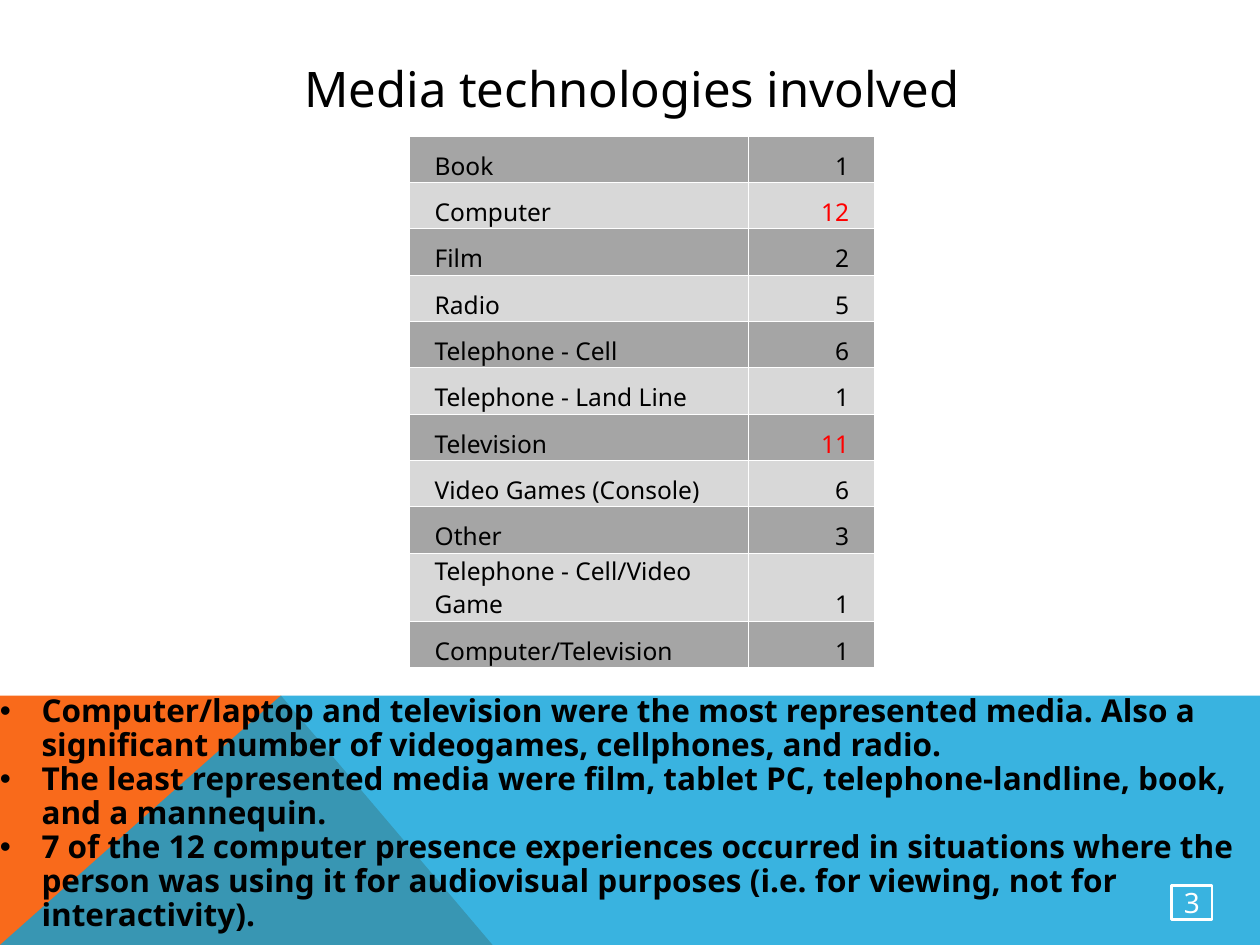
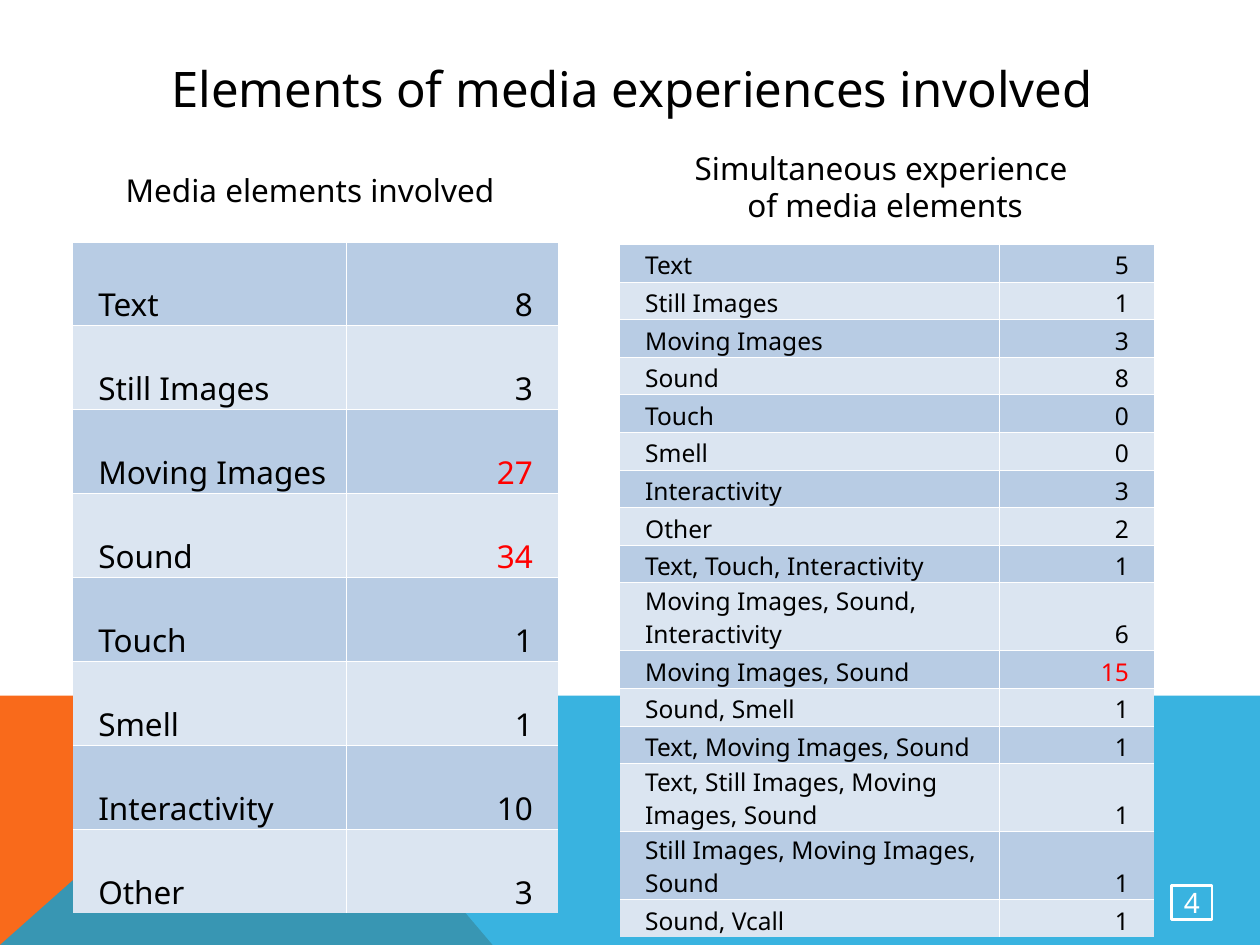
from lxml.etree import SubElement
from pptx import Presentation
from pptx.dml.color import RGBColor
from pptx.enum.shapes import MSO_SHAPE as SHAPE
from pptx.enum.text import MSO_ANCHOR as ANCHOR, PP_ALIGN as ALIGN
from pptx.oxml.ns import qn
from pptx.util import Inches, Pt

FONT = "Noto Sans"
BLACK, WHITE, RED = "000000", "FFFFFF", "FF0000"
ORANGE, BLUE = "F96A1B", "08A1D9"
GREYS = ("A5A5A5", "D8D8D8")
PALE_BLUES = ("B8CCE4", "DBE5F1")
WRAPPED_ROW = 0.54   # height of a row whose label takes two lines
LONGEST_LINE = 26    # characters that fit on one line of a label

TECHNOLOGIES = [
    ("Book", 1), ("Computer", 12), ("Film", 2), ("Radio", 5),
    ("Telephone - Cell", 6), ("Telephone - Land Line", 1),
    ("Television", 11), ("Video Games (Console)", 6), ("Other", 3),
    ("Telephone - Cell/Video Game", 1), ("Computer/Television", 1),
]
FINDINGS = [
    "Computer/laptop and television were the most represented media. "
    "Also a significant number of videogames, cellphones, and radio.",
    "The least represented media were film, tablet PC, "
    "telephone-landline, book, and a mannequin.",
    "7 of the 12 computer presence experiences occurred in situations "
    "where the person was using it for audiovisual purposes "
    "(i.e. for viewing, not for interactivity).",
]
ELEMENTS = [
    ("Text", 8), ("Still Images", 3), ("Moving Images", 27), ("Sound", 34),
    ("Touch", 1), ("Smell", 1), ("Interactivity", 10), ("Other", 3),
]
COMBINATIONS = [
    ("Text", 5), ("Still Images", 1), ("Moving Images", 3), ("Sound", 8),
    ("Touch", 0), ("Smell", 0), ("Interactivity", 3), ("Other", 2),
    ("Text, Touch, Interactivity", 1),
    ("Moving Images, Sound, Interactivity", 6),
    ("Moving Images, Sound", 15), ("Sound, Smell", 1),
    ("Text, Moving Images, Sound", 1),
    ("Text, Still Images, Moving Images, Sound", 1),
    ("Still Images, Moving Images, Sound", 1), ("Sound, Vcall", 1),
]


def rgb(code):
    return RGBColor.from_string(code)


def inches(*lengths):
    return [Inches(length) for length in lengths]


def set_margins(holder, left=0, top=0, right=0, bottom=0):
    margins = {"left": left, "top": top, "right": right, "bottom": bottom}
    for side, length in margins.items():
        setattr(holder, f"margin_{side}", Inches(length))


def write(paragraph, text, size, color=BLACK, align=ALIGN.LEFT, bold=False):
    paragraph.text = text
    paragraph.alignment = align
    for run in paragraph.runs:
        for name, value in {"name": FONT, "size": Pt(size), "bold": bold}.items():
            setattr(run.font, name, value)
        run.font.color.rgb = rgb(color)


def add_heading(slide, box, text, size, anchor=ANCHOR.TOP, margin=0):
    frame = slide.shapes.add_textbox(*inches(*box)).text_frame
    frame.word_wrap = True
    frame.vertical_anchor = anchor
    set_margins(frame, margin, margin, margin, margin)
    write(frame.paragraphs[0], text, size, align=ALIGN.CENTER)


# Band along the bottom

def add_outline(slide, points, color):
    start, *rest = [inches(*point) for point in points]
    builder = slide.shapes.build_freeform(*start)
    builder.add_line_segments(rest, close=True)
    outline = builder.convert_to_shape()
    outline.shadow.inherit = False
    outline.fill.solid()
    outline.fill.fore_color.rgb = rgb(color)
    outline.line.fill.background()
    return outline


def add_band(slide, left=0, top=5.52, width=10, height=1.98):
    right, bottom = left + width, top + height
    peak, foot = left + 2.23, left + 3.91
    add_outline(slide, [(left, bottom), (left, top), (peak, top),
                        (foot, bottom)], ORANGE)
    veil = add_outline(slide, [(left, bottom), (peak, top), (right, top),
                               (right, bottom)], BLUE)
    veil_color = veil.fill._xPr.find(qn("a:solidFill"))[0]
    SubElement(veil_color, qn("a:alpha"), val="80000")
    return veil


def add_findings(band, findings):
    frame = band.text_frame
    frame.word_wrap = True
    frame.vertical_anchor = ANCHOR.TOP
    set_margins(frame)
    for index, finding in enumerate(findings):
        paragraph = frame.add_paragraph() if index else frame.paragraphs[0]
        write(paragraph, finding, 18, bold=True)
        paragraph.line_spacing = 0.9
        props = paragraph._p.get_or_add_pPr()
        props.set("marL", str(Inches(0.33)))
        props.set("indent", str(-Inches(0.33)))
        bullet_color = SubElement(props, qn("a:buClr"))
        SubElement(bullet_color, qn("a:srgbClr"), val=BLACK)
        SubElement(props, qn("a:buFont"), typeface="Arial")
        SubElement(props, qn("a:buChar"), char="•")


def add_page_number(slide, number):
    badge = slide.shapes.add_shape(SHAPE.RECTANGLE,
                                   *inches(9.3, 7.03, 0.32, 0.27))
    badge.shadow.inherit = False
    badge.fill.background()
    badge.line.color.rgb = rgb(WHITE)
    badge.line.width = Pt(1.5)
    badge.text_frame.word_wrap = False
    badge.text_frame.vertical_anchor = ANCHOR.MIDDLE
    write(badge.text_frame.paragraphs[0], str(number), 16, WHITE, ALIGN.CENTER)


# Tables of counts

def set_borders(cell, visible):
    props = cell._tc.get_or_add_tcPr()
    for side in "LRTB":
        edge = SubElement(props, qn(f"a:ln{side}"), w=str(Pt(0.5)))
        if side in visible:
            paint = SubElement(edge, qn("a:solidFill"))
            SubElement(paint, qn("a:srgbClr"), val=WHITE)
        else:
            SubElement(edge, qn("a:noFill"))


def add_counts(slide, box, label_width, counts, shades, size, highlights):
    left, top, width, height = box
    table = slide.shapes.add_table(len(counts), 2, *inches(*box)).table
    table.first_row = table.horz_banding = False
    table.columns[0].width = Inches(label_width)
    table.columns[1].width = Inches(width - label_width)
    wrapped = [len(label) > LONGEST_LINE for label, _ in counts]
    single_row = (height - WRAPPED_ROW * sum(wrapped)) / wrapped.count(False)
    for index, (label, count) in enumerate(counts):
        table.rows[index].height = Inches(
            WRAPPED_ROW if wrapped[index] else single_row)
        bottom_edge = "" if index == len(counts) - 1 else "B"
        count_color = RED if count in highlights else BLACK
        columns = [
            (label, BLACK, ALIGN.LEFT, {"left": 0.2}, "RT"),
            (str(count), count_color, ALIGN.RIGHT, {"right": 0.2}, "LT"),
        ]
        for column, (text, color, align, margin, edges) in enumerate(columns):
            cell = table.cell(index, column)
            write(cell.text_frame.paragraphs[0], text, size, color, align)
            set_margins(cell, **margin)
            cell.vertical_anchor = ANCHOR.BOTTOM
            set_borders(cell, edges + bottom_edge)
            cell.fill.solid()
            cell.fill.fore_color.rgb = rgb(shades[index % 2])


# Slides

def add_base(deck, title, number, findings=()):
    slide = deck.slides.add_slide(deck.slide_layouts[6])
    band = add_band(slide)
    if findings:
        add_findings(band, findings)
    add_page_number(slide, number)
    add_heading(slide, (0.9, 0, 8.23, 1.4), title, 28, ANCHOR.MIDDLE, 0.04)
    return slide


def add_technologies_slide(deck):
    slide = add_base(deck, "Media technologies involved", 3, FINDINGS)
    add_counts(slide, (3.25, 1.08, 3.69, 4.22), 2.69, TECHNOLOGIES, GREYS,
               14, {11, 12})


def add_elements_slide(deck):
    slide = add_base(deck, "Elements of media experiences involved", 4)
    add_counts(slide, (0.58, 1.92, 3.85, 5.33), 2.17, ELEMENTS, PALE_BLUES,
               18, {27, 34})
    add_counts(slide, (4.92, 1.94, 4.24, 5.5), 3.01, COMBINATIONS,
               PALE_BLUES, 14, {15})
    add_heading(slide, (4.92, 1.18, 4.21, 0.67),
                "Simultaneous experience \vof media elements", 18)
    add_heading(slide, (0.5, 1.36, 3.92, 0.3), "Media elements involved", 18)


def main():
    deck = Presentation()
    deck.slide_width, deck.slide_height = inches(10, 7.5)
    add_technologies_slide(deck)
    add_elements_slide(deck)
    deck.save("out.pptx")


if __name__ == "__main__":
    main()
